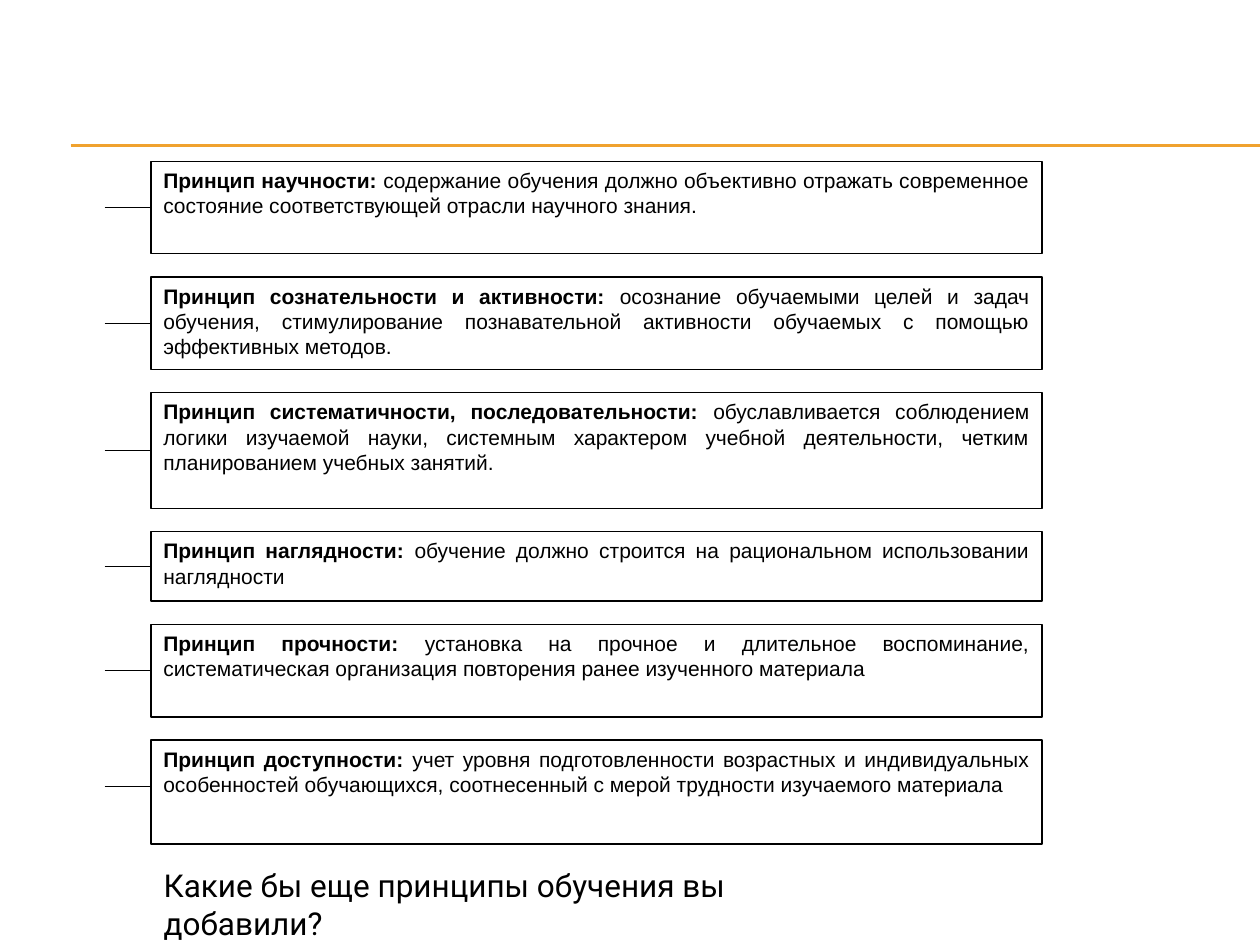
from lxml.etree import SubElement
from pptx import Presentation
from pptx.dml.color import RGBColor
from pptx.enum.shapes import MSO_CONNECTOR as Line, MSO_SHAPE as Shape
from pptx.enum.text import MSO_ANCHOR as Anchor, PP_ALIGN as Align
from pptx.oxml.ns import qn
from pptx.util import Inches, Pt

BLACK = RGBColor(0x00, 0x00, 0x00)
WHITE = RGBColor(0xFF, 0xFF, 0xFF)
ORANGE = RGBColor(0xF0, 0xA2, 0x2E)

WIDTH, HEIGHT = 10, 7.5
LEFT, TOP = 0.83, 1.28
CELL = 5.42 / 59
TICK, BOX, GAP = 4, 77, 2

PRINCIPLES = [
    (8, "Принцип научности: ",
     "содержание обучения должно объективно отражать современное состояние "
     "соответствующей отрасли научного знания."),
    (8, "Принцип сознательности и активности: ",
     "осознание обучаемыми целей и задач обучения, стимулирование познавательной "
     "активности обучаемых с помощью эффективных методов."),
    (10, "Принцип систематичности, последовательности: ",
     "обуславливается соблюдением логики изучаемой науки, системным характером "
     "учебной деятельности, четким планированием учебных занятий."),
    (6, "Принцип наглядности: ",
     "обучение должно строится на рациональном использовании наглядности"),
    (8, "Принцип прочности: ",
     "установка на прочное и длительное воспоминание, систематическая "
     "организация повторения ранее изученного материала"),
    (9, "Принцип доступности: ",
     "учет уровня подготовленности возрастных и индивидуальных особенностей "
     "обучающихся, соотнесенный с мерой трудности изучаемого материала"),
]
QUESTION = "Какие бы еще принципы обучения вы добавили?"


def add_text(p, text, font="Arial", size=12, bold=False, color=BLACK):
    r = p.add_run()
    r.text = text
    r.font.name, r.font.size, r.font.bold = font, Pt(size), bold
    r.font.color.rgb = color


def col(n):
    return Inches(LEFT + n * CELL)


def row(n):
    return Inches(TOP + n * CELL)


class Deck:
    """Holds the line style and the slide being drawn."""

    def __init__(self, prs, weight=0.75):
        self.weight = Pt(weight)
        self.s = prs.slides.add_slide(prs.slide_layouts[6])
        self.shapes = self.s.shapes

    def rule(self, x1, x2, y, color=BLACK):
        sp = self.shapes.add_connector(Line.STRAIGHT, x1, y, x2, y)
        sp.line.color.rgb, sp.line.width = color, self.weight
        SubElement(sp._element.spPr, qn("a:effectLst"))

    def box(self, top, rows, name, meaning):
        sp = self.shapes.add_shape(Shape.RECTANGLE, col(TICK), row(top),
                                   Inches(BOX * CELL), Inches(rows * CELL))
        sp.shadow.inherit = False
        sp.fill.solid()
        sp.fill.fore_color.rgb = WHITE
        sp.line.color.rgb, sp.line.width = BLACK, self.weight
        tf = sp.text_frame
        tf.word_wrap, tf.vertical_anchor = True, Anchor.TOP
        p = tf.paragraphs[0]
        p.alignment = Align.JUSTIFY
        add_text(p, name, bold=True)
        add_text(p, meaning)

    def question(self, text, x, y, w, h):
        sp = self.shapes.add_textbox(Inches(x * WIDTH), Inches(y * HEIGHT),
                                     Inches(w * WIDTH), Inches(h * HEIGHT))
        tf = sp.text_frame
        tf.word_wrap = True
        add_text(tf.paragraphs[0], text, font="Roboto", size=18)


def main():
    prs = Presentation()
    prs.slide_width, prs.slide_height = Inches(WIDTH), Inches(HEIGHT)
    deck = Deck(prs)
    for y in (1.15, 1.16):
        deck.rule(Inches(0.56), Inches(WIDTH), Inches(y), ORANGE)
    top = 0
    for rows, name, meaning in PRINCIPLES:
        deck.box(top, rows, name, meaning)
        deck.rule(col(0), col(TICK), row(top + rows // 2))
        top += rows + GAP
    deck.question(QUESTION, 0.12, 0.91, 0.56, 0.05)
    prs.save("out.pptx")


if __name__ == "__main__":
    main()
